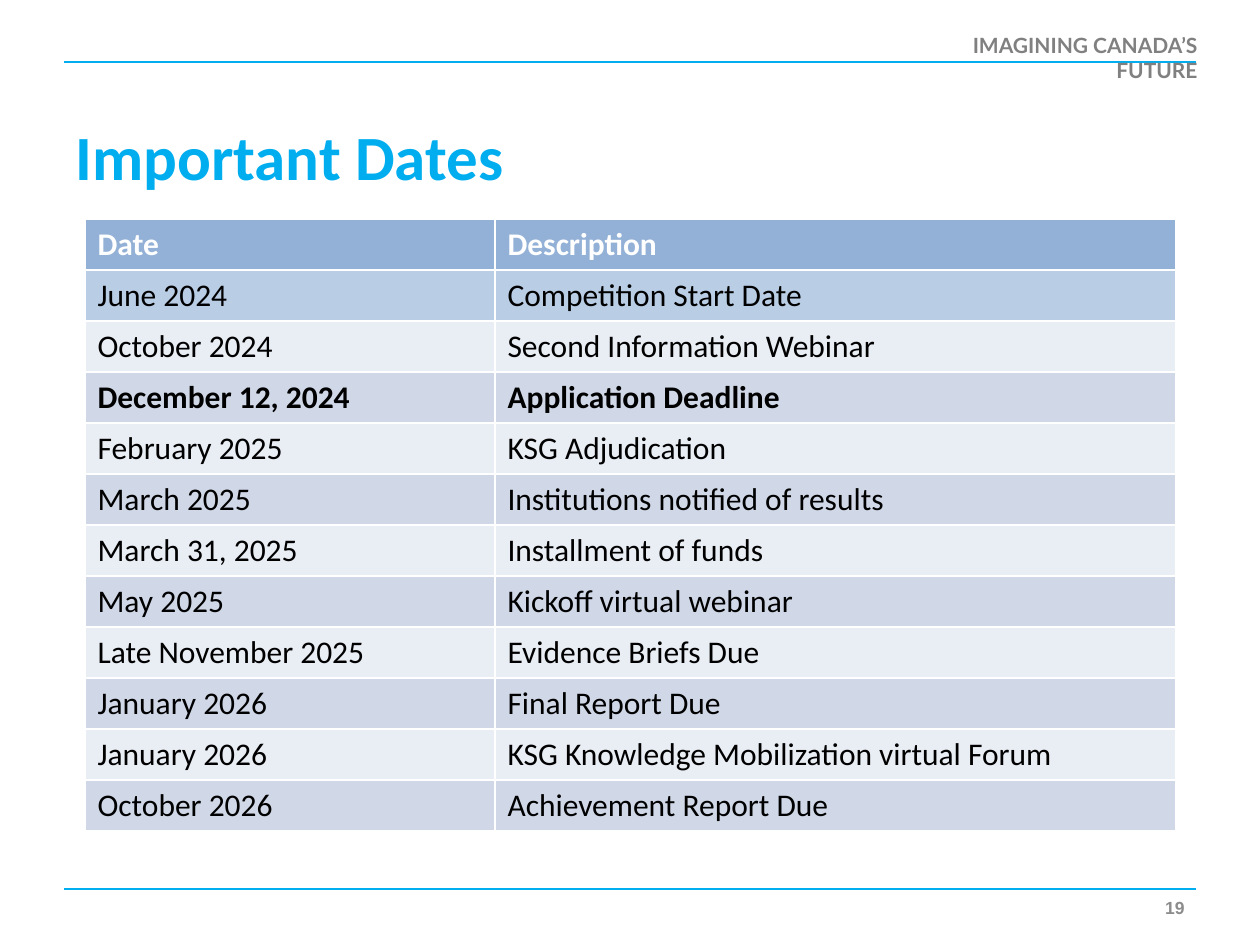
import pptx
import pptx.dml.color
import pptx.enum.shapes
import pptx.enum.text
import pptx.oxml.ns
import pptx.util
from lxml import etree

EMU_PER_PX = 914400 / 126
SLIDE_SIZE = (1260, 945)
COLORS = {
    "accent": "00AEEF",
    "motto": "808080",
    "number": "8C8C8C",
    "header": "93B1D7",
    "start": "B9CDE5",
    "light": "E9EDF4",
    "dark": "D0D8E8",
    "white": "FFFFFF",
    "black": "000000",
}
ALIGN = pptx.enum.text.PP_ALIGN
ANCHOR = pptx.enum.text.MSO_ANCHOR


def px(length):
    return pptx.util.Emu(round(length * EMU_PER_PX))


def color(name):
    return pptx.dml.color.RGBColor.from_string(COLORS[name])


class SlideBuilder:
    """Holds the style and the current slide."""

    def __init__(self, slide, font="Calibri"):
        self.slide = slide
        self.font = font

    def add_text(self, frame, text, size, ink, bold=False, font=None, align=ALIGN.LEFT):
        paragraph = frame.paragraphs[0]
        paragraph.alignment = align
        run = paragraph.add_run()
        run.text = text
        run.font.name = font or self.font
        run.font.size = pptx.util.Pt(size)
        run.font.bold = bold
        run.font.color.rgb = color(ink)

    def rule(self, left, right, y):
        line = self.slide.shapes.add_connector(
            pptx.enum.shapes.MSO_CONNECTOR.STRAIGHT, px(left), px(y), px(right), px(y))
        line.line.color.rgb = color("accent")
        line.line.width = pptx.util.Pt(1.25)
        etree.SubElement(line._element.spPr, pptx.oxml.ns.qn("a:effectLst"))

    def label(self, box, text, size, ink, font, anchor=ANCHOR.TOP):
        frame = self.slide.shapes.add_textbox(*map(px, box)).text_frame
        frame.word_wrap = True
        frame.vertical_anchor = anchor
        self.add_text(frame, text, size, ink, True, font, ALIGN.RIGHT)

    def title(self, box, text):
        heading = self.slide.shapes.title
        heading.left, heading.top, heading.width, heading.height = map(px, box)
        frame = heading.text_frame
        frame.auto_size = pptx.enum.text.MSO_AUTO_SIZE.NONE
        frame.vertical_anchor = ANCHOR.MIDDLE
        self.add_text(frame, text, 36, "accent", True)

    def table(self, left, top, widths, row_height, rows, fills, bold_rows):
        # The default table style supplies the white cell borders
        table = self.slide.shapes.add_table(
            len(rows), len(widths), px(left), px(top),
            px(sum(widths)), px(row_height * len(rows))).table
        for column, width in zip(table.columns, widths):
            column.width = px(width)
        for r, (texts, fill) in enumerate(zip(rows, fills)):
            table.rows[r].height = px(row_height)
            for c, text in enumerate(texts):
                cell = table.cell(r, c)
                cell.fill.solid()
                cell.fill.fore_color.rgb = color(fill)
                self.add_text(cell.text_frame, text, 18,
                              "white" if r == 0 else "black", r in bold_rows)


DATES = [
    ("Date", "Description"),
    ("June 2024", "Competition Start Date"),
    ("October 2024", "Second Information Webinar"),
    ("December 12, 2024", "Application Deadline"),
    ("February 2025", "KSG Adjudication"),
    ("March 2025", "Institutions notified of results"),
    ("March 31, 2025", "Installment of funds"),
    ("May 2025", "Kickoff virtual webinar"),
    ("Late November 2025", "Evidence Briefs Due"),
    ("January 2026", "Final Report Due"),
    ("January 2026", "KSG Knowledge Mobilization virtual Forum"),
    ("October 2026", "Achievement Report Due"),
]


def main():
    deck = pptx.Presentation()
    deck.slide_width, deck.slide_height = map(px, SLIDE_SIZE)
    builder = SlideBuilder(deck.slides.add_slide(deck.slide_layouts[5]))

    # Page frame: rules, motto and slide number
    for y in (889, 62):
        builder.rule(64, 1196, y)
    builder.label((890, 26, 320, 38), "IMAGINING CANADA’S FUTURE", 12, "motto", "Lato")
    builder.label((1106, 890, 91, 36), "19", 10, "number", "Arial", ANCHOR.MIDDLE)

    # Heading
    builder.title((63, 77, 1134, 157), "Important Dates")

    # Timetable: header, highlighted start, then alternating bands
    fills = ["header", "start"] + ["light", "dark"] * 5
    builder.table(85, 219, (410, 681), 51, DATES, fills, bold_rows=(0, 3))

    deck.save("out.pptx")


if __name__ == "__main__":
    main()
